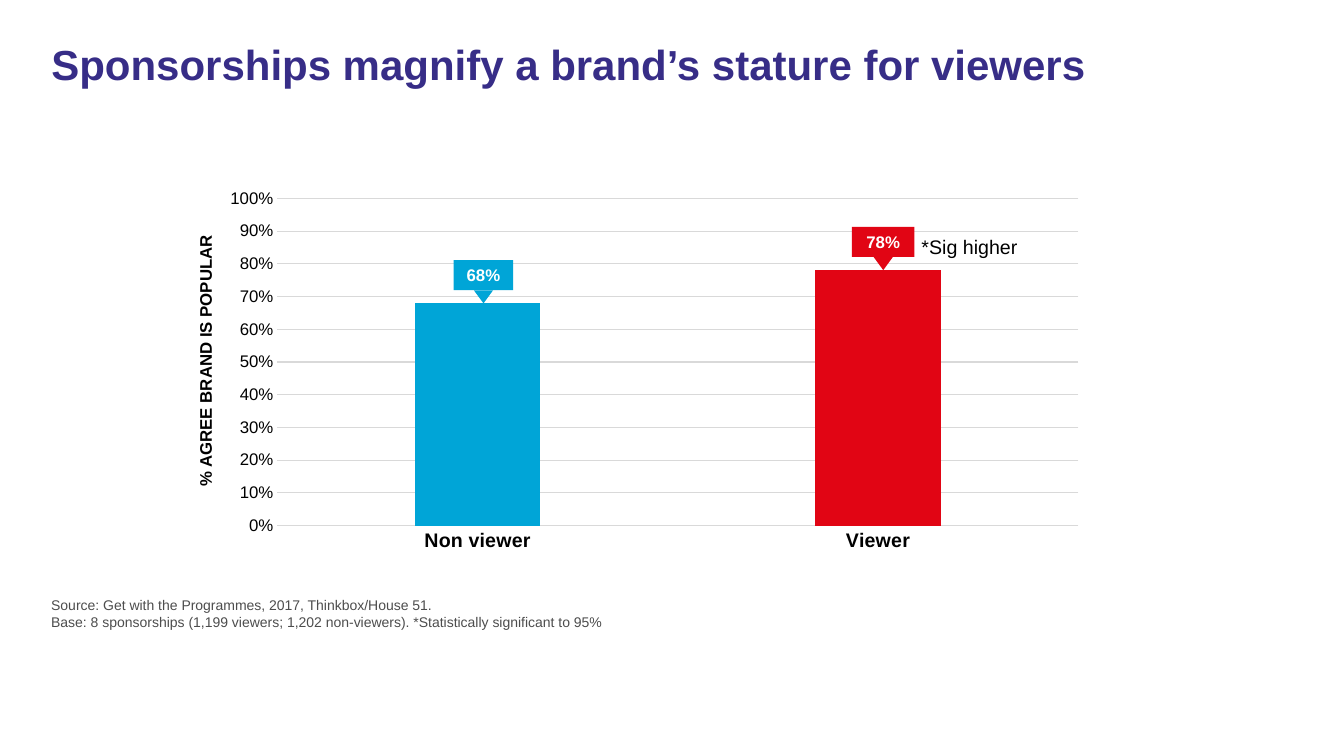
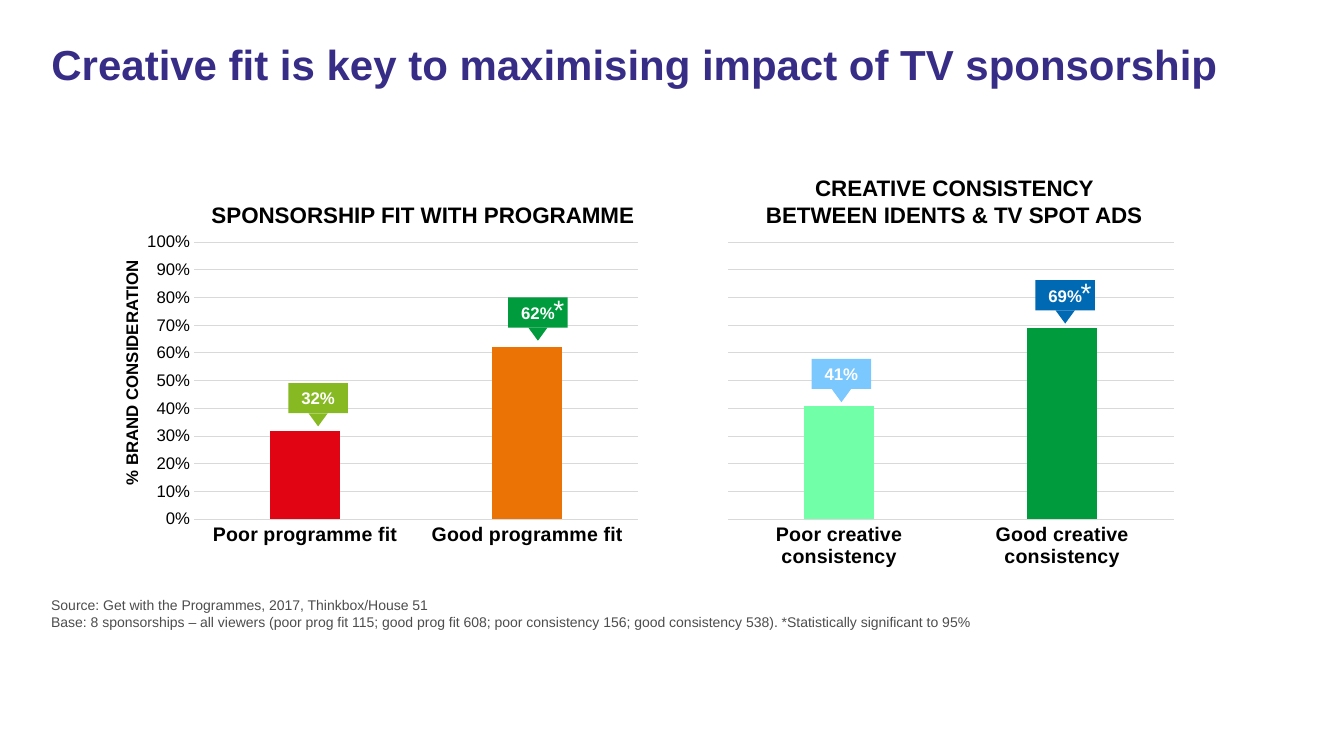
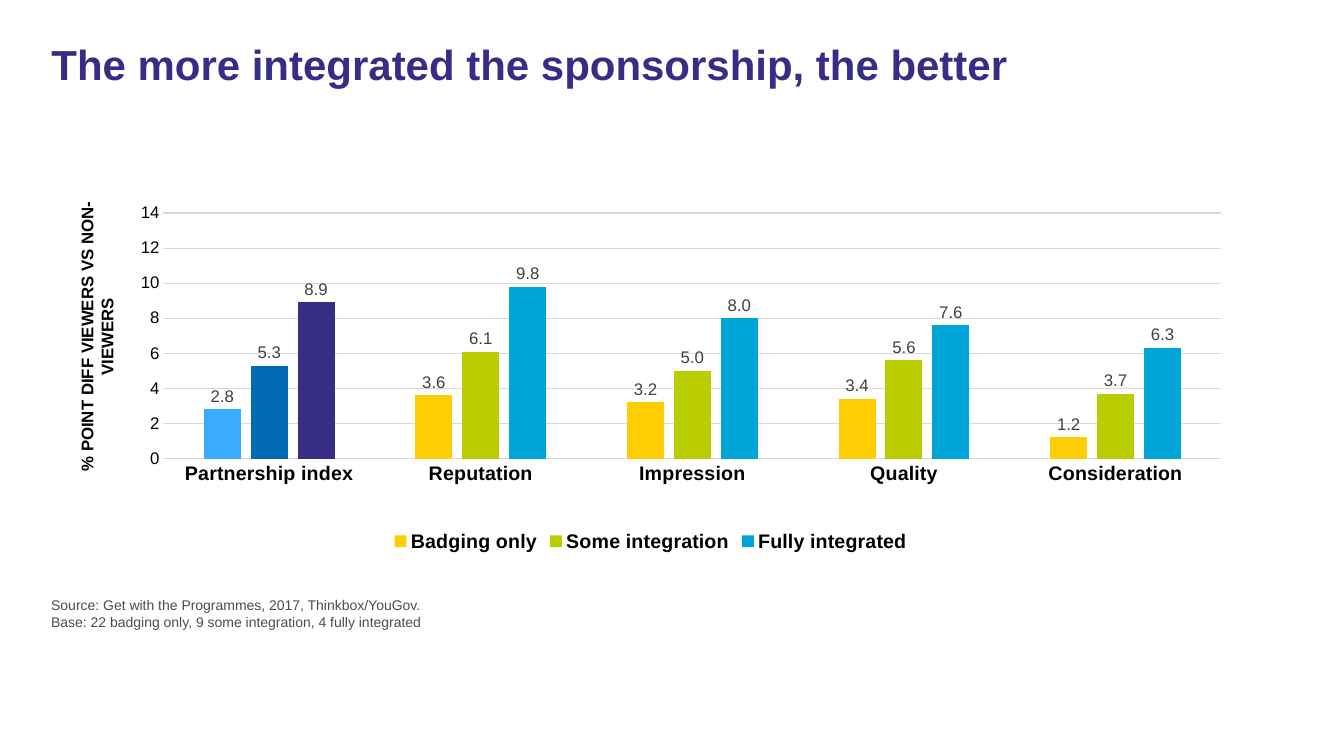
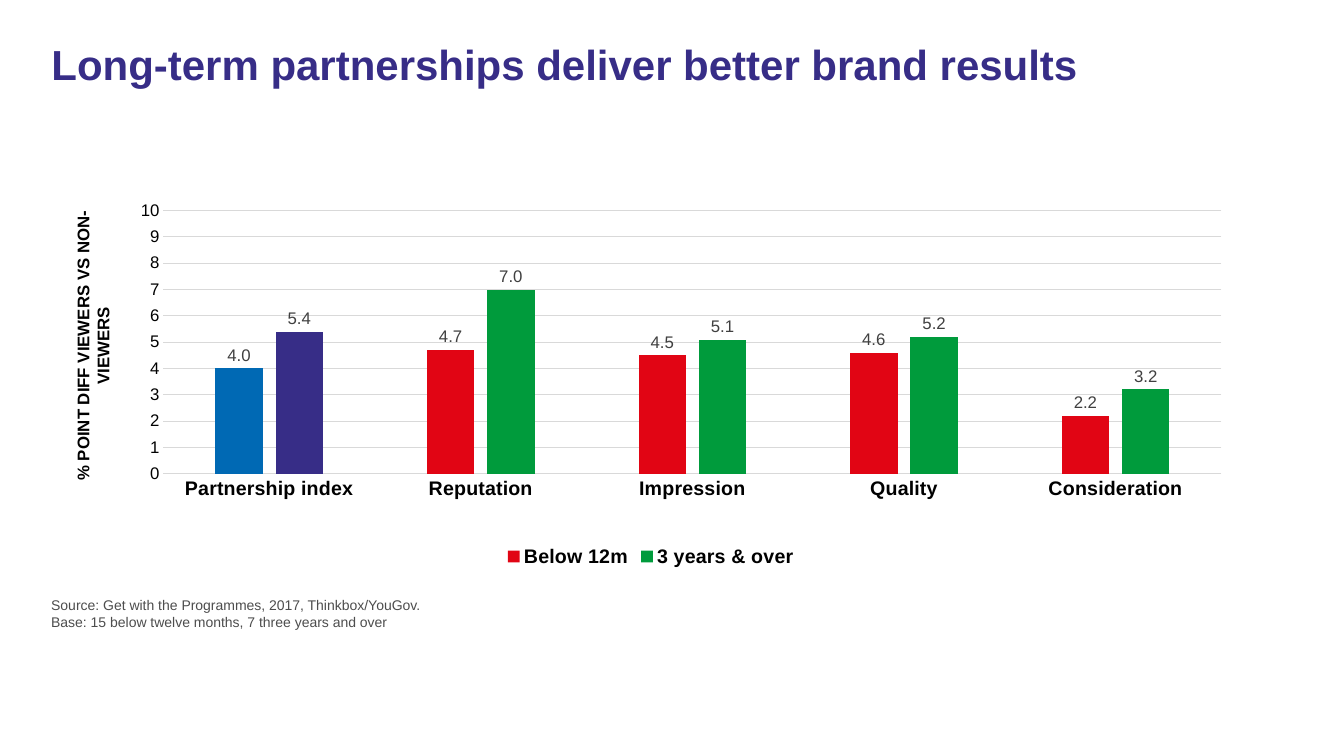
from lxml import etree
from pptx import Presentation
from pptx.chart import data
from pptx.dml.color import RGBColor
from pptx.enum import chart as charts, shapes, text
from pptx.oxml import ns
from pptx.util import Inches, Pt

FONT = "Arial"
BLACK = RGBColor(0x00, 0x00, 0x00)
WHITE = RGBColor(0xFF, 0xFF, 0xFF)
GRID = RGBColor(0xD9, 0xD9, 0xD9)
SOURCE_GREY = RGBColor(0x4D, 0x4D, 0x4D)
LABEL_GREY = RGBColor(0x40, 0x40, 0x40)
PURPLE = RGBColor(0x37, 0x2D, 0x87)
CYAN = RGBColor(0x00, 0xA5, 0xD7)
RED = RGBColor(0xE1, 0x05, 0x14)
ORANGE = RGBColor(0xEB, 0x73, 0x05)
YELLOW = RGBColor(0xFF, 0xCD, 0x00)
LIME = RGBColor(0xB9, 0xCD, 0x00)
LEAF = RGBColor(0x87, 0xB9, 0x23)
GREEN = RGBColor(0x00, 0x9B, 0x3C)
MINT = RGBColor(0x71, 0xFF, 0xA8)
BLUE = RGBColor(0x00, 0x69, 0xB4)
SKY = RGBColor(0x39, 0xAC, 0xFF)
PALE_BLUE = RGBColor(0x7B, 0xC8, 0xFF)

METRICS = ["Partnership index", "Reputation", "Impression", "Quality", "Consideration"]
DIFF_LABEL = "% POINT DIFF VIEWERS VS NON-VIEWERS"
# Inner plot areas as fractions of the chart: x, y, width, height
WIDE_PLOT = (0.07, 0.04, 0.91, 0.87)
PAIR_PLOT = (0.09, 0.04, 0.89, 0.77)
METRIC_PLOT = (0.09, 0.04, 0.89, 0.7)


def set_font(font, size, color=BLACK, bold=False):
    font.name, font.size, font.bold = FONT, Pt(size), bold
    font.color.rgb = color


def write(frame, words, size, color=BLACK, bold=False, align=text.PP_ALIGN.LEFT):
    frame.word_wrap = True
    frame.text = words
    for paragraph in frame.paragraphs:
        paragraph.alignment = align
        for run in paragraph.runs:
            set_font(run.font, size, color, bold)


def add_text(slide, box, words, size, **style):
    label = slide.shapes.add_textbox(*map(Inches, box))
    write(label.text_frame, words, size, **style)
    return label


def add_heading(slide, box, words, size=16):
    return add_text(slide, box, words, size, bold=True, align=text.PP_ALIGN.CENTER)


def add_axis_label(slide, box, words):
    add_heading(slide, box, words, 12).rotation = 270


def add_base_slide(prs, title, source):
    """Slide with the shared title style and source note."""
    slide = prs.slides.add_slide(prs.slide_layouts[5])
    heading = slide.shapes.title
    heading.left, heading.top, heading.width, heading.height = map(
        Inches, (0.41, 0.39, 12.4, 1.12))
    write(heading.text_frame, title, 30, PURPLE, True)
    heading.text_frame.vertical_anchor = text.MSO_ANCHOR.TOP
    heading.text_frame.paragraphs[0].line_spacing = 0.9
    add_text(slide, (0.41, 5.87, 12.4, 0.4), source, 10, color=SOURCE_GREY)
    return slide


def set_plot_area(chart, plot_box):
    plot_area = chart._chartSpace.chart.plotArea
    for old in plot_area.findall(ns.qn("c:layout")):
        plot_area.remove(old)
    layout = etree.Element(ns.qn("c:layout"))
    manual = etree.SubElement(layout, ns.qn("c:manualLayout"))
    settings = [("layoutTarget", "inner"), ("xMode", "edge"), ("yMode", "edge")]
    for tag, value in settings + list(zip("xywh", plot_box)):
        etree.SubElement(manual, ns.qn("c:" + tag)).set("val", str(value))
    plot_area.insert(0, layout)


def add_columns(slide, box, categories, series, plot_box, top, step,
                number_format="General", show_scale=True, show_key=False):
    """Column chart; each series is (name, values, color, {point: color})."""
    chart_data = data.CategoryChartData(number_format=number_format)
    chart_data.categories = categories
    for name, values, _, _ in series:
        chart_data.add_series(name, values)
    chart = slide.shapes.add_chart(charts.XL_CHART_TYPE.COLUMN_CLUSTERED,
                                   *map(Inches, box), chart_data).chart
    set_font(chart.font, 10)
    chart.has_title = False
    set_plot_area(chart, plot_box)

    # Columns and values
    plot = chart.plots[0]
    plot.gap_width, plot.overlap, plot.vary_by_categories = 219, -27, False
    for columns, (_, _, color, point_colors) in zip(plot.series, series):
        columns.invert_if_negative = False
        columns.format.fill.solid()
        columns.format.fill.fore_color.rgb = color
        for index, point_color in point_colors.items():
            fill = columns.points[index].format.fill
            fill.solid()
            fill.fore_color.rgb = point_color
        if show_key:
            labels = columns.data_labels
            labels.show_value = True
            labels.number_format, labels.number_format_is_linked = "#,##0.0", False
            labels.position = charts.XL_LABEL_POSITION.OUTSIDE_END
            set_font(labels.font, 12, LABEL_GREY)

    # Axes
    names, scale = chart.category_axis, chart.value_axis
    for axis, size, bold in ((names, 14, True), (scale, 12, False)):
        axis.major_tick_mark = axis.minor_tick_mark = charts.XL_TICK_MARK.NONE
        set_font(axis.tick_labels.font, size, bold=bold)
    scale.minimum_scale, scale.maximum_scale, scale.major_unit = 0, top, step
    scale.tick_labels.number_format = number_format
    scale.tick_labels.number_format_is_linked = False
    scale.format.line.fill.background()
    scale.visible = show_scale
    for line in (names.format.line, scale.major_gridlines.format.line):
        line.color.rgb, line.width = GRID, Pt(0.75)

    # Legend
    chart.has_legend = show_key
    if show_key:
        chart.legend.position = charts.XL_LEGEND_POSITION.BOTTOM
        chart.legend.include_in_layout = False
        set_font(chart.legend.font, 14, bold=True)


def add_callout(slide, left, top, value, color, width=0.59, starred=False):
    """Value flag with a pointer below and an optional significance star."""
    flag_height, tip_width, tip_height = 0.3, 0.19, 0.13
    parts = (
        (shapes.MSO_SHAPE.RECTANGLE, (left, top, width, flag_height)),
        (shapes.MSO_SHAPE.ISOSCELES_TRIANGLE,
         (left + (width - tip_width) / 2, top + flag_height, tip_width, tip_height)),
    )
    flag, tip = [slide.shapes.add_shape(kind, *map(Inches, box)) for kind, box in parts]
    for part in (flag, tip):
        part.shadow.inherit = False
        part.fill.solid()
        part.fill.fore_color.rgb = color
        part.line.fill.background()
    tip.rotation = 180
    frame = flag.text_frame
    frame.margin_left = frame.margin_right = 0
    frame.vertical_anchor = text.MSO_ANCHOR.MIDDLE
    write(frame, value, 12, WHITE, True, text.PP_ALIGN.CENTER)
    if starred:
        add_text(slide, (left + 0.35, top - 0.1, 0.4, 0.44), "*", 20, color=WHITE)


def build_stature(prs):
    slide = add_base_slide(
        prs, "Sponsorships magnify a brand’s stature for viewers",
        "Source: Get with the Programmes, 2017, Thinkbox/House 51.\n"
        "Base: 8 sponsorships (1,199 viewers; 1,202 non-viewers). "
        "*Statistically significant to 95%")
    add_columns(slide, (2.14, 1.82, 8.73, 3.73), ["Non viewer", "Viewer"],
                [("Series 1", (0.68, 0.78), CYAN, {1: RED})],
                WIDE_PLOT, 1, 0.1, "0%")
    add_callout(slide, 4.5, 2.58, "68%", CYAN)
    add_callout(slide, 8.45, 2.25, "78%", RED, width=0.62)
    add_text(slide, (9.04, 2.28, 1.28, 0.34), "*Sig higher", 14)
    add_axis_label(slide, (0.44, 3.43, 3.19, 0.3), "% AGREE BRAND IS POPULAR")


def build_creative_fit(prs):
    slide = add_base_slide(
        prs, "Creative fit is key to maximising impact of TV sponsorship",
        "Source: Get with the Programmes, 2017, Thinkbox/House 51\n"
        "Base: 8 sponsorships – all viewers (poor prog fit 115; good prog fit 608; "
        "poor consistency 156; good consistency 538). *Statistically significant to 95%")
    # Programme fit
    add_columns(slide, (1.46, 2.26, 4.97, 3.57),
                ["Poor programme fit", "Good programme fit"],
                [("Series 1", (0.32, 0.62), CYAN, {0: RED, 1: ORANGE})],
                PAIR_PLOT, 1, 0.1, "0%")
    add_heading(slide, (1.99, 1.95, 4.41, 0.37), "SPONSORSHIP FIT WITH PROGRAMME")
    add_axis_label(slide, (-0.29, 3.55, 3.19, 0.3), "% BRAND CONSIDERATION")
    add_callout(slide, 2.86, 3.8, "32%", LEAF)
    add_callout(slide, 5.04, 2.95, "62%", GREEN, starred=True)
    # Creative consistency, indexed to the best score
    add_columns(slide, (6.77, 2.26, 4.97, 3.57),
                ["Poor creative consistency", "Good creative consistency"],
                [("Series 1", (59, 100), PURPLE, {0: MINT, 1: GREEN})],
                PAIR_PLOT, 145, 14.5, show_scale=False)
    add_heading(slide, (7.46, 1.68, 4.01, 0.64),
                "CREATIVE CONSISTENCY BETWEEN IDENTS & TV SPOT ADS")
    add_callout(slide, 8.05, 3.56, "41%", PALE_BLUE)
    add_callout(slide, 10.27, 2.78, "69%", BLUE, starred=True)


def build_metrics(prs, title, base, series, chart_top, label_at, top, step):
    """Five brand metrics compared across types of sponsorship."""
    slide = add_base_slide(
        prs, title, "Source: Get with the Programmes, 2017, Thinkbox/YouGov.\n" + base)
    add_columns(slide, (0.56, chart_top, 11.79, 3.73), METRICS, series,
                METRIC_PLOT, top, step, show_key=True)
    add_axis_label(slide, (*label_at, 3.08, 0.5), DIFF_LABEL)


def main():
    prs = Presentation()
    prs.slide_width, prs.slide_height = Inches(13.33), Inches(7.5)
    build_stature(prs)
    build_creative_fit(prs)
    build_metrics(
        prs, "The more integrated the sponsorship, the better",
        "Base: 22 badging only, 9 some integration, 4 fully integrated",
        [("Badging only", (2.8, 3.6, 3.2, 3.4, 1.2), YELLOW, {0: SKY}),
         ("Some integration", (5.3, 6.1, 5, 5.6, 3.7), LIME, {0: BLUE}),
         ("Fully integrated", (8.9, 9.8, 8, 7.6, 6.3), CYAN, {0: PURPLE})],
        chart_top=1.79, label_at=(-0.58, 3.09), top=15, step=2)
    build_metrics(
        prs, "Long-term partnerships deliver better brand results",
        "Base: 15 below twelve months, 7 three years and over",
        [("Below 12m", (4, 4.7, 4.5, 4.6, 2.2), RED, {0: BLUE}),
         ("3 years & over", (5.4, 7, 5.1, 5.2, 3.2), GREEN, {0: PURPLE})],
        chart_top=1.94, label_at=(-0.62, 3.18), top=10, step=1)
    prs.save("out.pptx")


if __name__ == "__main__":
    main()
